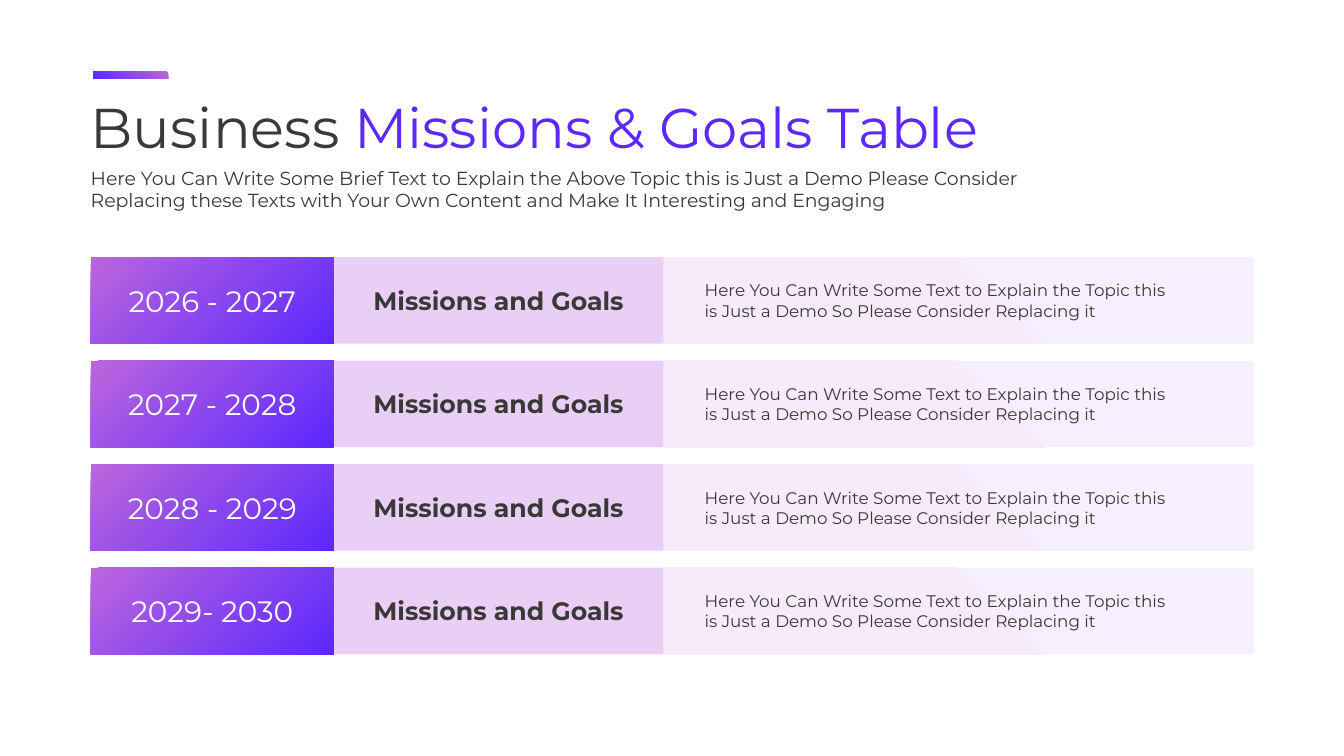
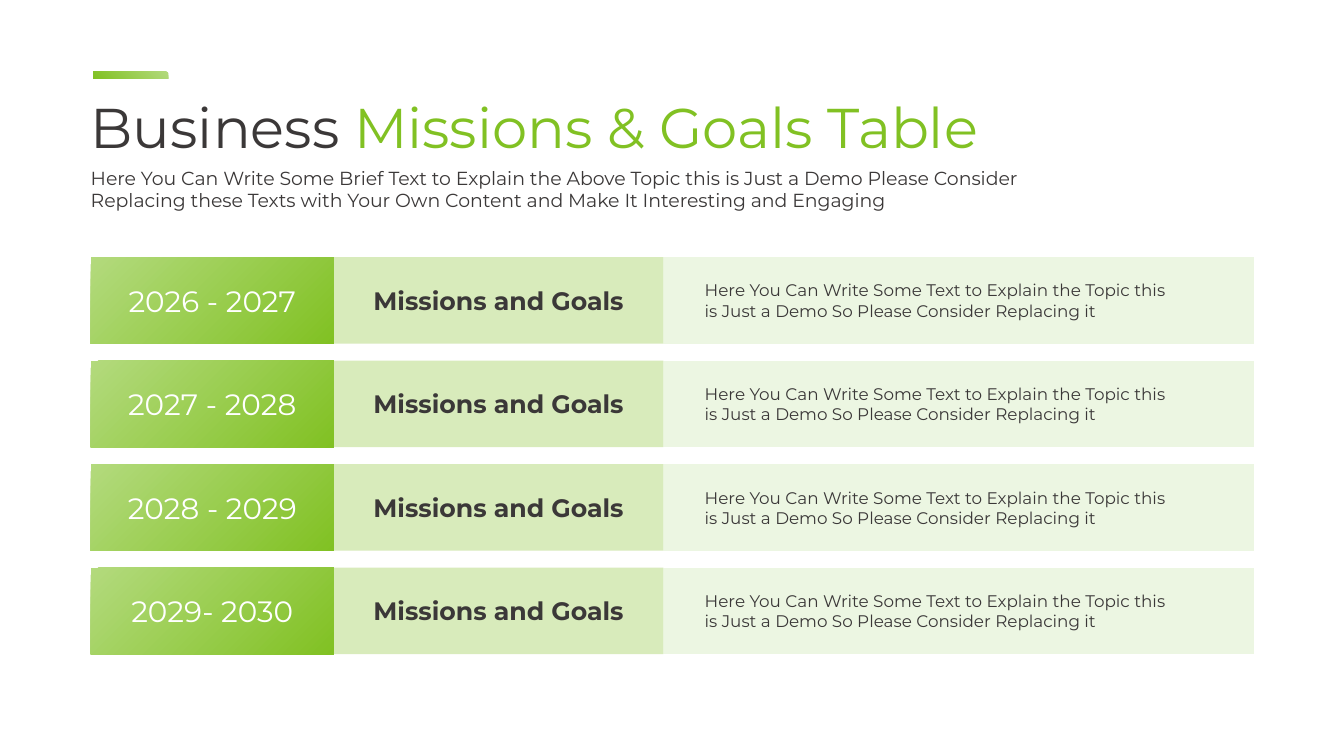
import pptx
import pptx.util
from lxml import etree
from pptx.dml.color import RGBColor
from pptx.enum.shapes import MSO_SHAPE
from pptx.enum.text import MSO_ANCHOR, MSO_AUTO_SIZE, PP_ALIGN
from pptx.oxml.ns import qn
from pptx.util import Inches, Pt

FONT = "Montserrat"
COLORS = {"text": "3B3838", "white": "FFFFFF"}
# Gradients are (percent, colour) stops.
PALETTES = [
    {"accent": "5D28FE", "label": "E9CFF5",
     "strong": [(0, "5D28FE"), (100, "BB66DD")],
     "pale": [(12, "F6EBFB"), (100, "F6EFFF")]},
    {"accent": "81C123", "label": "D8EBBB",
     "strong": [(0, "81C123"), (100, "B3DA7D")],
     "pale": [(0, "EBF5DF"), (100, "ECF6E2")]},
]

TITLE = ("Business ", "Missions & Goals Table")
INTRO = [
    "Here You Can Write Some Brief Text to Explain the Above Topic this is Just a Demo Please Consider",
    "Replacing these Texts with Your Own Content and Make It Interesting and Engaging",
]
LABEL = "Missions and Goals"
DETAIL = [
    "Here You Can Write Some Text to Explain the Topic this",
    "is Just a Demo So Please Consider Replacing it",
]
YEARS = ["2026 - 2027", "2027 - 2028", "2028 - 2029", "2029- 2030"]

ROW_TOP, ROW_PITCH, ROW_HEIGHT = 2.55, 1.027, 0.86
YEAR_X, LABEL_X, DETAIL_X, ROW_RIGHT = 0.9, 3.31, 6.58, 12.44
BOTTOM_LEFT, BOTTOM_RIGHT = (0, 100, 100, 0), (100, 100, 0, 0)


def fill_radial(sp, stops, focus):
    """Fill with a circular gradient around focus (left, top, right, bottom percents)."""
    sp.fill.gradient()
    grad = sp._element.spPr.find(qn("a:gradFill"))
    for child in list(grad):
        grad.remove(child)
    stop_list = etree.SubElement(grad, qn("a:gsLst"))
    for percent, color in stops:
        stop = etree.SubElement(stop_list, qn("a:gs"), pos=str(percent * 1000))
        etree.SubElement(stop, qn("a:srgbClr"), val=color)
    circle = etree.SubElement(grad, qn("a:path"), path="circle")
    sides = {side: str(value * 1000) for side, value in zip("ltrb", focus)}
    etree.SubElement(circle, qn("a:fillToRect"), **sides)


def add_rect(s, x, y, w, h):
    sp = s.shapes.add_shape(MSO_SHAPE.RECTANGLE, Inches(x), Inches(y), Inches(w), Inches(h))
    sp.shadow.inherit = False
    sp.line.fill.background()
    return sp


def write(tf, lines, size, color="text", bold=False, align=PP_ALIGN.LEFT, anchor=MSO_ANCHOR.MIDDLE):
    """Put lines in the frame, one paragraph each, in the shared text style."""
    tf.text = "\n".join(lines)
    tf.word_wrap = True
    tf.auto_size = MSO_AUTO_SIZE.NONE
    tf.vertical_anchor = anchor
    for p in tf.paragraphs:
        p.alignment = align
        p.space_before = Pt(0)
        p.font.name, p.font.size, p.font.bold = FONT, Pt(size), bold
        p.font.color.rgb = RGBColor.from_string(COLORS[color])


def place(sp, x, y, w, h):
    sp.left, sp.top, sp.width, sp.height = map(Inches, (x, y, w, h))


def add_heading(s, palette):
    bar = add_rect(s, 0.93, 0.71, 0.74, 0.07)
    fill_radial(bar, palette["strong"], BOTTOM_LEFT)

    title, intro = s.shapes.title, s.placeholders[1]
    place(title, 0.8, 0.87, 9.78, 0.77)
    write(title.text_frame, TITLE[:1], 40, anchor=MSO_ANCHOR.TOP)
    r = title.text_frame.paragraphs[0].add_run()
    r.text = TITLE[1]
    r.font.color.rgb = RGBColor.from_string(palette["accent"])

    place(intro, 0.8, 1.6, 9.71, 0.56)
    write(intro.text_frame, INTRO, 13.5, anchor=MSO_ANCHOR.TOP)
    for p in intro.text_frame.paragraphs:
        pPr = p._p.get_or_add_pPr()
        pPr.set("marL", "0")
        pPr.set("indent", "0")
        bullet = etree.Element(qn("a:buNone"))
        pPr.find(qn("a:spcBef")).addnext(bullet)


def add_row(s, y, years, palette):
    detail = add_rect(s, DETAIL_X, y, ROW_RIGHT - DETAIL_X, ROW_HEIGHT)
    fill_radial(detail, palette["pale"], BOTTOM_LEFT)
    write(detail.text_frame, DETAIL, 12)
    detail.text_frame.margin_left = Inches(0.41)

    label = add_rect(s, LABEL_X, y, DETAIL_X - LABEL_X, ROW_HEIGHT)
    label.fill.solid()
    label.fill.fore_color.rgb = RGBColor.from_string(palette["label"])
    write(label.text_frame, [LABEL], 18, bold=True, align=PP_ALIGN.CENTER)

    period = add_rect(s, YEAR_X, y, LABEL_X - YEAR_X, ROW_HEIGHT)
    fill_radial(period, palette["strong"], BOTTOM_RIGHT)
    write(period.text_frame, [years], 21, color="white", align=PP_ALIGN.CENTER)


def main():
    prs = pptx.Presentation()
    prs.slide_width, prs.slide_height = Inches(13.33), Inches(7.5)
    for palette in PALETTES:
        s = prs.slides.add_slide(prs.slide_layouts[1])
        add_heading(s, palette)
        for i, years in enumerate(YEARS):
            add_row(s, ROW_TOP + i * ROW_PITCH, years, palette)
    prs.save("out.pptx")


if __name__ == "__main__":
    main()
